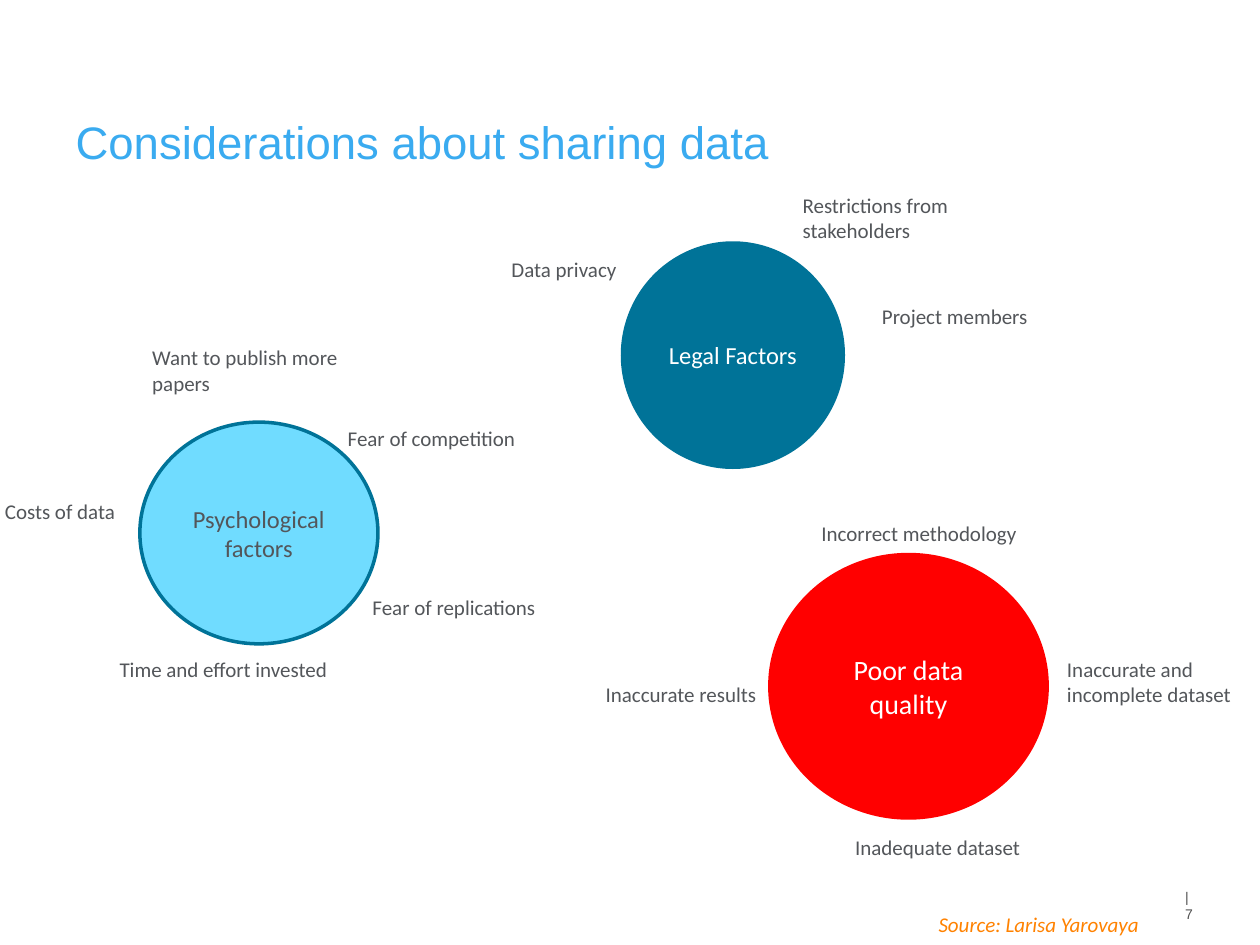
from dataclasses import dataclass

from lxml.etree import SubElement
from pptx import Presentation
from pptx.dml.color import RGBColor
from pptx.enum.shapes import MSO_SHAPE
from pptx.enum.text import MSO_ANCHOR, MSO_AUTO_SIZE, PP_ALIGN
from pptx.oxml.ns import qn
from pptx.slide import Slide
from pptx.text.text import TextFrame
from pptx.util import Cm, Pt

TITLE_BLUE = RGBColor(0x3A, 0xAB, 0xF0)
SKY = RGBColor(0x70, 0xDC, 0xFF)
TEAL = RGBColor(0x00, 0x73, 0x98)
RED = RGBColor(0xFF, 0x00, 0x00)
WHITE = RGBColor(0xFF, 0xFF, 0xFF)
GREY = RGBColor(0x53, 0x56, 0x5A)
PAGE_GREY = RGBColor(0x50, 0x50, 0x50)
ORANGE = RGBColor(0xFF, 0x82, 0x00)

CAPTION_WIDTH = 4.8
LINE_HEIGHTS = {1: 0.77, 2: 1.28}


@dataclass(frozen=True)
class Caption:
    text: str
    left: float
    top: float
    lines: int = 1


@dataclass(frozen=True)
class Factor:
    """A circle with the considerations placed around it; lengths in cm."""
    name: str
    left: float
    top: float
    width: float
    height: float
    fill: RGBColor
    outline: RGBColor
    ink: RGBColor
    size: int
    captions: tuple[Caption, ...]


FACTORS = (
    Factor("Psychological factors", 2.82, 8.51, 4.8, 4.47, SKY, TEAL, GREY, 14, (
        Caption("Want to publish more papers", 2.82, 6.83, 2),
        Caption("Fear of competition", 6.76, 8.46),
        Caption("Fear of replications", 7.26, 11.86),
        Caption("Time and effort invested", 2.16, 13.11),
        Caption("Costs of data", -0.15, 9.93),
    )),
    Factor("Legal Factors", 12.55, 4.9, 4.45, 4.52, TEAL, TEAL, WHITE, 14, (
        Caption("Restrictions from stakeholders", 15.93, 3.76, 2),
        Caption("Project members", 17.53, 5.99),
        Caption("Data privacy", 10.06, 5.05),
    )),
    Factor("Poor data quality", 15.52, 11.18, 5.59, 5.31, RED, RED, WHITE, 16, (
        Caption("Incorrect methodology", 16.31, 10.36),
        Caption("Inaccurate and incomplete dataset", 21.26, 13.11, 2),
        Caption("Inadequate dataset", 16.99, 16.69),
        Caption("Inaccurate results", 11.96, 13.61),
    )),
)


def write(frame: TextFrame, text: str, size: int, color: RGBColor,
          font_name: str = "Calibri", align: PP_ALIGN = PP_ALIGN.LEFT,
          italic: bool = False) -> None:
    frame.text = text
    frame.word_wrap = True
    paragraph = frame.paragraphs[0]
    paragraph.alignment = align
    for run in paragraph.runs:
        run.font.name = font_name
        run.font.size = Pt(size)
        run.font.color.rgb = color
        run.font.italic = italic


def add_text(slide: Slide, left: float, top: float, width: float,
             height: float) -> TextFrame:
    box = slide.shapes.add_textbox(Cm(left), Cm(top), Cm(width), Cm(height))
    return box.text_frame


def add_title(slide: Slide) -> None:
    title = slide.shapes.title
    title.left, title.top, title.width, title.height = Cm(1.27), Cm(2.31), Cm(22.89), Cm(1.07)
    frame = title.text_frame
    write(frame, "Considerations about sharing data", 26, TITLE_BLUE, "Arial")
    frame.auto_size = MSO_AUTO_SIZE.NONE
    frame.vertical_anchor = MSO_ANCHOR.MIDDLE


def add_factor(slide: Slide, factor: Factor) -> None:
    circle = slide.shapes.add_shape(
        MSO_SHAPE.FLOWCHART_CONNECTOR, Cm(factor.left), Cm(factor.top),
        Cm(factor.width), Cm(factor.height))
    circle.shadow.inherit = False
    circle.fill.solid()
    circle.fill.fore_color.rgb = factor.fill
    circle.line.color.rgb = factor.outline
    circle.line.width = Pt(2)
    circle.text_frame.vertical_anchor = MSO_ANCHOR.MIDDLE
    write(circle.text_frame, factor.name, factor.size, factor.ink, align=PP_ALIGN.CENTER)

    for caption in factor.captions:
        frame = add_text(slide, caption.left, caption.top, CAPTION_WIDTH,
                         LINE_HEIGHTS[caption.lines])
        write(frame, caption.text, 12, GREY)
        frame.auto_size = MSO_AUTO_SIZE.SHAPE_TO_FIT_TEXT


def add_page_number(slide: Slide) -> None:
    frame = add_text(slide, 23.01, 17.78, 1.63, 0.94)
    frame.margin_left, frame.margin_right = Cm(0.88), Cm(0)
    frame.vertical_anchor = MSO_ANCHOR.MIDDLE
    properties = frame.paragraphs[0]._p.get_or_add_pPr()
    tabs = SubElement(properties, qn("a:tabLst"))
    SubElement(tabs, qn("a:tab"), pos=str(Cm(0.36)), algn="l")
    write(frame, "|\t7", 8, PAGE_GREY, "Arial")


def main() -> None:
    deck = Presentation()
    deck.slide_width, deck.slide_height = Cm(25.4), Cm(19.05)
    slide = deck.slides.add_slide(deck.slide_layouts[5])
    add_page_number(slide)
    add_title(slide)
    for factor in FACTORS:
        add_factor(slide, factor)
    source = add_text(slide, 18.67, 18.26, 10, LINE_HEIGHTS[1])
    write(source, "Source: Larisa Yarovaya", 12, ORANGE, italic=True)
    deck.save("out.pptx")


if __name__ == "__main__":
    main()
